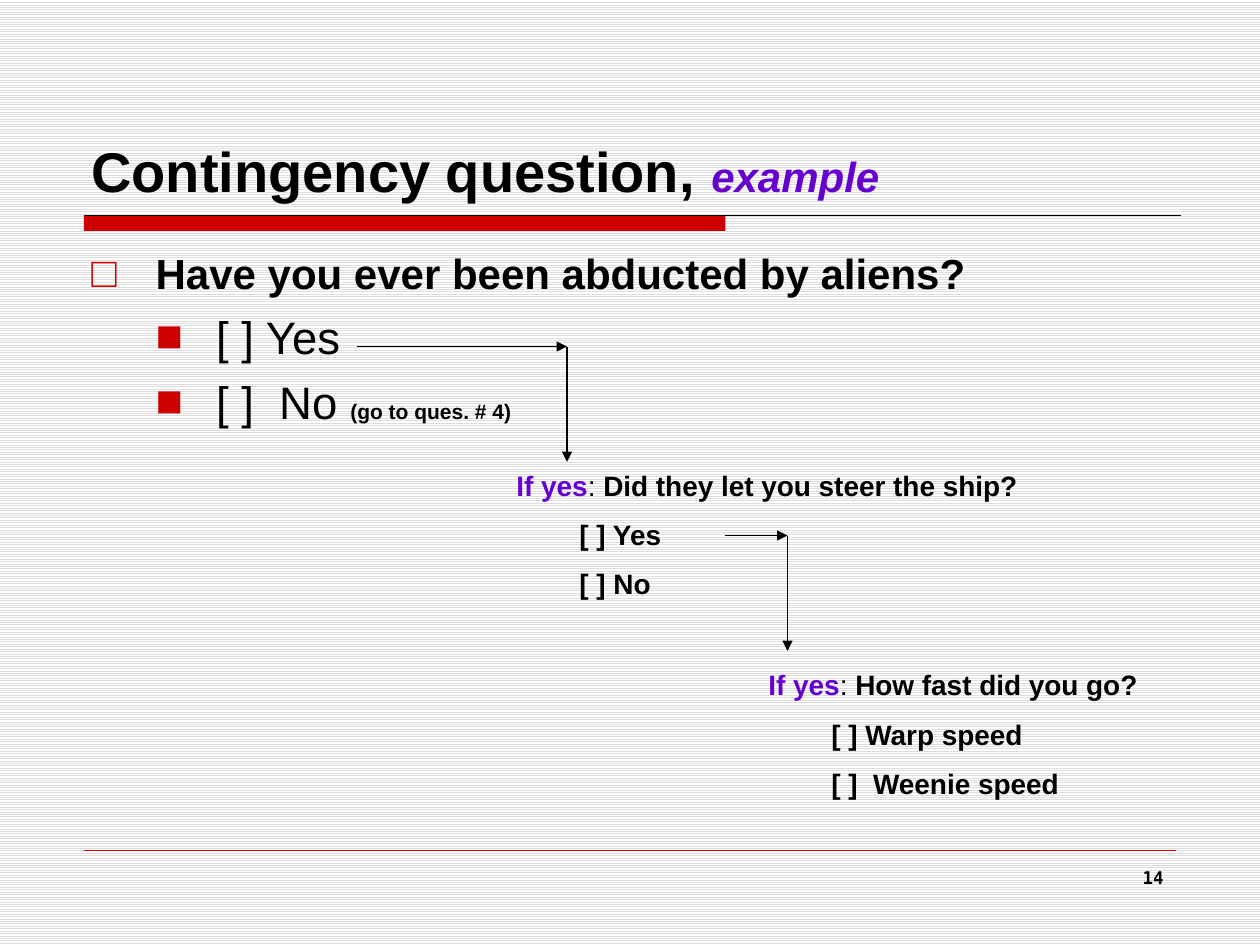
import pptx
import pptx.util
import pptx.dml.color
import pptx.enum.dml
import pptx.enum.shapes
import pptx.enum.text
import pptx.oxml.ns
from lxml import etree

Pt = pptx.util.Pt
ALIGN = pptx.enum.text.PP_ALIGN
qn = pptx.oxml.ns.qn


def colour(hex_string):
    return pptx.dml.color.RGBColor.from_string(hex_string)


class SlideBuilder:
    black = "000000"
    red = "CC0000"
    purple = "6600CC"
    font = "Arial"

    def __init__(self, slide):
        self.slide = slide

    def background(self, front, back):
        fill = self.slide.background.fill
        fill.patterned()
        fill.pattern = pptx.enum.dml.MSO_PATTERN.LIGHT_HORIZONTAL
        fill.fore_color.rgb = colour(front)
        fill.back_color.rgb = colour(back)

    def frame(self, shape, left, top, width, height):
        shape.left, shape.top = Pt(left), Pt(top)
        shape.width, shape.height = Pt(width), Pt(height)
        frame = shape.text_frame
        frame.word_wrap = True
        frame.auto_size = pptx.enum.text.MSO_AUTO_SIZE.NONE
        return frame

    def add_runs(self, paragraph, runs, align=ALIGN.LEFT, before=0):
        paragraph.alignment = align
        paragraph.space_before = Pt(before)
        for text, size, style in runs:
            run = paragraph.add_run()
            run.text = text
            run.font.name = style.get("font", self.font)
            run.font.size = Pt(size)
            run.font.bold = style.get("bold", True)
            run.font.italic = style.get("italic", False)
            run.font.color.rgb = colour(style.get("color", self.black))

    def title(self, runs, *box):
        frame = self.frame(self.slide.shapes.title, *box)
        frame.vertical_anchor = pptx.enum.text.MSO_ANCHOR.BOTTOM
        self.add_runs(frame.paragraphs[0], runs)

    def bullet(self, paragraph, symbol, margin, hanging):
        properties = paragraph._p.get_or_add_pPr()
        properties.set("marL", str(Pt(margin)))
        properties.set("indent", str(-Pt(hanging)))
        tint = etree.SubElement(properties, qn("a:buClr"))
        etree.SubElement(tint, qn("a:srgbClr"), val=self.red)
        etree.SubElement(properties, qn("a:buFont"), typeface=self.font)
        etree.SubElement(properties, qn("a:buChar"), char=symbol)

    def body(self, items, *box):
        frame = self.frame(self.slide.placeholders[1], *box)
        for index, (level, runs) in enumerate(items):
            paragraph = frame.paragraphs[0] if index == 0 else frame.add_paragraph()
            paragraph.level = level
            self.add_runs(paragraph, runs, before=6 if index else 0)
            symbol, margin, hanging = [("□", 36.7, 36.7), ("■", 71.3, 34.6)][level]
            self.bullet(paragraph, symbol, margin, hanging)

    def text(self, lines, *box, align=ALIGN.LEFT):
        frame = self.frame(self.slide.shapes.add_textbox(0, 0, 0, 0), *box)
        for index, runs in enumerate(lines):
            paragraph = frame.paragraphs[0] if index == 0 else frame.add_paragraph()
            self.add_runs(paragraph, runs, align, before=9 if index else 0)

    def follow_up(self, question, answers, *box):
        lead = [
            ("If yes", 16, {"color": self.purple}),
            (": ", 16, {"bold": False}),
            (question, 16, {}),
        ]
        self.text([lead] + [[(f"\t[ ] {answer}", 16, {})] for answer in answers], *box)

    def bar(self, *box):
        bar = self.slide.shapes.add_shape(
            pptx.enum.shapes.MSO_SHAPE.RECTANGLE, *map(Pt, box))
        bar.shadow.inherit = False
        bar.fill.solid()
        bar.fill.fore_color.rgb = colour(self.red)
        bar.line.fill.background()

    def line(self, start, end, line_color, width, arrow=False):
        line = self.slide.shapes.add_connector(
            pptx.enum.shapes.MSO_CONNECTOR.STRAIGHT, *map(Pt, start + end))
        line.line.color.rgb = colour(line_color)
        line.line.width = Pt(width)
        properties = line._element.spPr
        if arrow:
            etree.SubElement(properties.find(qn("a:ln")), qn("a:tailEnd"), type="triangle")
        etree.SubElement(properties, qn("a:effectLst"))

    def branch(self, start, corner, end):
        for origin, target in ((start, corner), (corner, end)):
            self.line(origin, target, self.black, 0.75, arrow=True)


def main():
    deck = pptx.Presentation()
    deck.slide_width, deck.slide_height = Pt(720), Pt(540)
    page = SlideBuilder(deck.slides.add_slide(deck.slide_layouts[1]))

    page.background("DDDDDD", "FFFFFF")
    page.bar(48, 123, 366.5, 9)
    page.line((48, 123), (675, 123), page.black, 0.75)
    page.line((48, 486), (672, 486), page.red, 0.25)
    page.text([[("14", 10, {"font": "DejaVu Sans Mono"})]],
              516, 492, 156, 37.5, align=ALIGN.RIGHT)

    page.title([
        ("Contingency question, ", 32, {}),
        ("example", 24, {"color": page.purple, "italic": True}),
    ], 45, 24, 630, 96)
    page.body([
        (0, [("Have you ever been abducted by aliens?", 24, {})]),
        (1, [("[ ] Yes", 26, {"bold": False})]),
        (1, [("[ ]  No ", 26, {"bold": False}), ("(go to ques. # 4)", 12, {})]),
    ], 45, 138, 630, 336)

    page.branch((204, 198), (324, 198), (324, 264))
    page.follow_up("Did they let you steer the ship?", ["Yes", "No"], 288, 264, 384, 84)
    page.branch((414, 306), (450, 306), (450, 372))
    page.follow_up("How fast did you go?", ["Warp speed", " Weenie speed"],
                   432, 378, 246, 84)

    deck.save("out.pptx")


if __name__ == "__main__":
    main()
